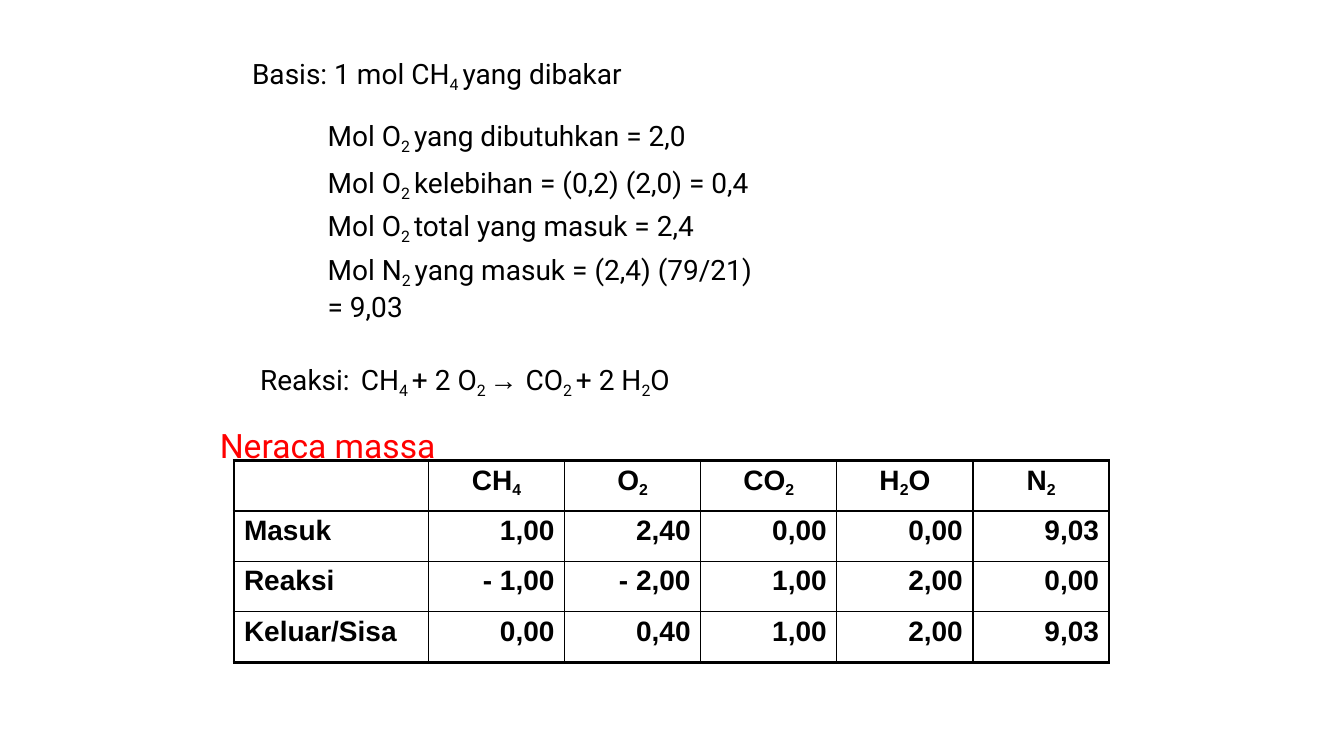
from lxml.etree import SubElement
from pptx import Presentation
from pptx.dml.color import RGBColor
from pptx.enum.text import MSO_ANCHOR, PP_ALIGN
from pptx.oxml.ns import qn
from pptx.util import Inches, Pt

BLACK = RGBColor(0, 0, 0)
RED = RGBColor(255, 0, 0)

# A "|" separates runs and a leading "_" marks a subscript run.
CALCULATION = [
    {"lines": ["Basis: 1 mol CH|_4 |yang dibakar"], "indent": 0.36},
    {"lines": ["Mol O|_2 |yang dibutuhkan = 2,0"], "indent": 1.11, "before": 18},
    {"lines": ["Mol O|_2 |kelebihan = (0,2) (2,0) = 0,4"],
     "indent": 1.11, "before": 2.2, "spacing": 31.2},
    {"lines": ["Mol O|_2 |total yang masuk = 2,4"], "indent": 1.11, "spacing": 31.2},
    {"lines": ["Mol N|_2 |yang masuk = (2,4) (79/21)", "= 9,03"],
     "indent": 1.11, "before": 5},
    {"lines": ["Reaksi:\t|CH|_4 |+ 2 O|_2 |→ |CO|_2 |+ 2 H|_2|O"],
     "indent": 0.44, "before": 28, "tab": 1.75},
    {"lines": ["Neraca massa"], "indent": 0.04, "before": 17.9, "size": 24, "color": RED},
]
BALANCE = [
    ["", "CH|_4", "O|_2", "CO|_2", "H|_2|O", "N|_2"],
    ["Masuk", "1,00", "2,40", "0,00", "0,00", "9,03"],
    ["Reaksi", "- 1,00", "- 2,00", "1,00", "2,00", "0,00"],
    ["Keluar/Sisa", "0,00", "0,40", "1,00", "2,00", "9,03"],
]
COLUMN_WIDTHS = [1.93] + [1.35] * 5
ROW_HEIGHT = 0.5


def add_spans(para, markup, font_name, size=20, color=BLACK, bold=False):
    for part in markup.split("|"):
        if not part:
            continue
        subscript = part.startswith("_")
        span = para.add_run()
        span.text = part.removeprefix("_")
        span.font.name = "Arial" if "→" in part else font_name
        span.font.size = Pt(19.5 if subscript else size)
        span.font.color.rgb = color
        span.font.bold = bold
        if subscript:
            span.font._element.set("baseline", "-21000")


def add_calculation(page):
    box = page.shapes.add_textbox(Inches(2.14), Inches(0.53), Inches(6.27), Inches(4.1))
    frame = box.text_frame
    frame.word_wrap = True
    frame.margin_left = frame.margin_right = frame.margin_bottom = 0
    frame.margin_top = Inches(0.03)
    for index, entry in enumerate(CALCULATION):
        para = frame.paragraphs[0] if index == 0 else frame.add_paragraph()
        properties = para._p.get_or_add_pPr()
        properties.set("marL", str(Inches(entry["indent"])))
        properties.set("indent", "0")
        para.space_before = Pt(entry.get("before", 0))
        if "spacing" in entry:
            para.line_spacing = Pt(entry["spacing"])
        if "tab" in entry:
            tabs = SubElement(properties, qn("a:tabLst"))
            SubElement(tabs, qn("a:tab"), pos=str(Inches(entry["tab"])), algn="l")
        for number, line in enumerate(entry["lines"]):
            if number:
                para.add_line_break()
            add_spans(para, line, "Roboto", entry.get("size", 20), entry.get("color", BLACK))


def set_borders(cell, outer_sides):
    properties = cell._tc.get_or_add_tcPr()
    for side in "LRTB":
        width = Pt(2.25 if side in outer_sides else 1)
        line = SubElement(properties, qn(f"a:ln{side}"), w=str(width))
        fill = SubElement(line, qn("a:solidFill"))
        SubElement(fill, qn("a:srgbClr"), val=str(BLACK))
    cell.fill.background()


def add_balance(page):
    row_count, column_count = len(BALANCE), len(COLUMN_WIDTHS)
    table = page.shapes.add_table(
        row_count, column_count, Inches(2.32), Inches(4.57),
        Inches(sum(COLUMN_WIDTHS)), Inches(ROW_HEIGHT * row_count)).table
    table.first_row = table.horz_banding = False
    for column, width in zip(table.columns, COLUMN_WIDTHS):
        column.width = Inches(width)
    for row_index, values in enumerate(BALANCE):
        table.rows[row_index].height = Inches(ROW_HEIGHT)
        for column_index, value in enumerate(values):
            cell = table.cell(row_index, column_index)
            cell.vertical_anchor = MSO_ANCHOR.TOP
            cell.margin_left = cell.margin_right = Inches(0.1)
            cell.margin_top, cell.margin_bottom = Inches(0.04), 0
            para = cell.text_frame.paragraphs[0]
            if row_index == 0:
                para.alignment = PP_ALIGN.CENTER
            else:
                para.alignment = PP_ALIGN.RIGHT if column_index else PP_ALIGN.LEFT
            add_spans(para, value, "Arial", bold=True)
            edges = {"L": column_index == 0, "R": column_index == column_count - 1,
                     "T": row_index == 0, "B": row_index == row_count - 1}
            set_borders(cell, [side for side, outer in edges.items() if outer])


def main():
    deck = Presentation()
    deck.slide_width, deck.slide_height = Inches(13.33), Inches(7.5)
    page = deck.slides.add_slide(deck.slide_layouts[6])
    add_calculation(page)
    add_balance(page)
    deck.save("out.pptx")


if __name__ == "__main__":
    main()
